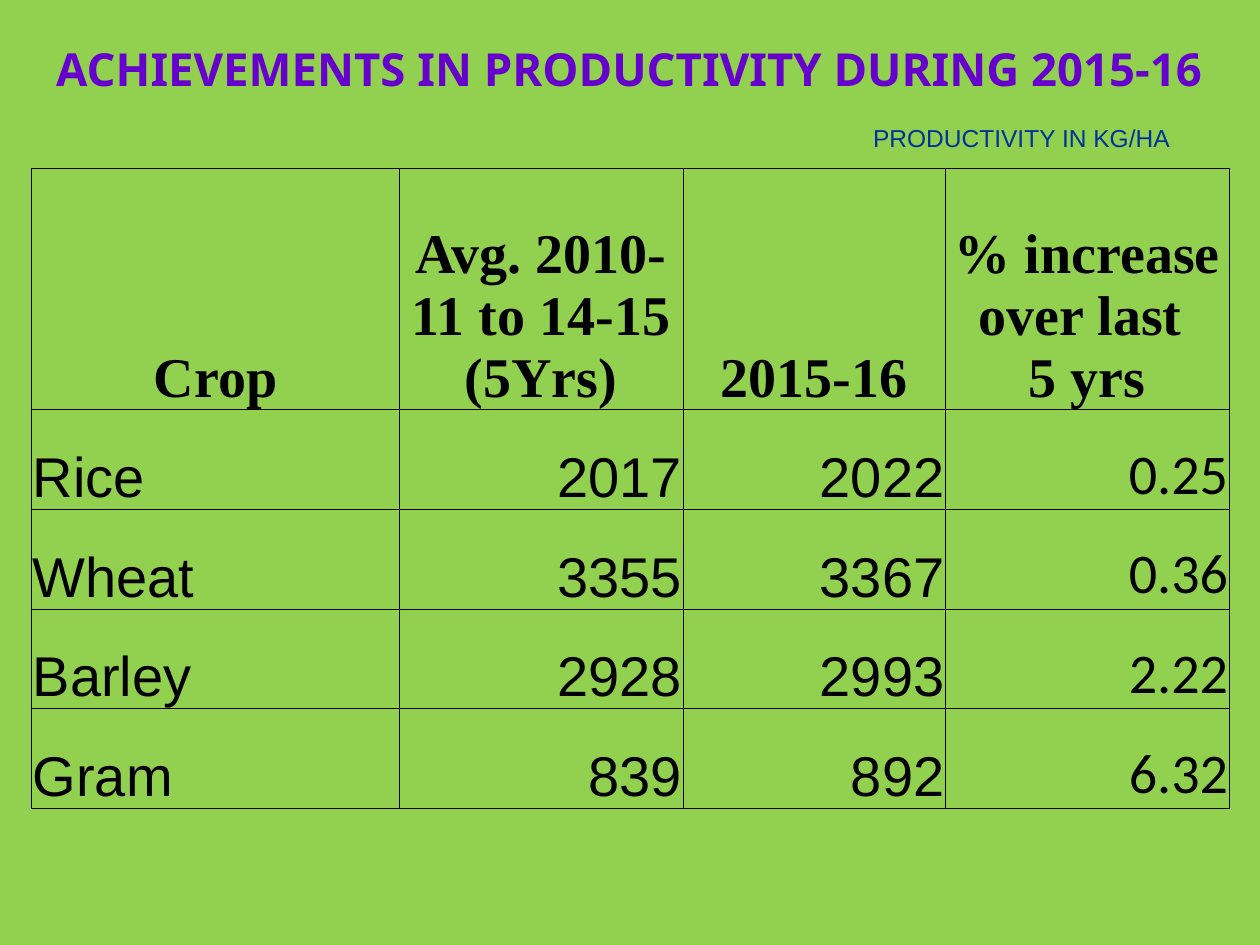
"""Build the slide on crop productivity in 2015-16."""
from lxml.etree import SubElement
from pptx import Presentation
from pptx.dml.color import RGBColor
from pptx.enum.text import MSO_ANCHOR, PP_ALIGN
from pptx.oxml.ns import qn
from pptx.util import Cm, Pt

COLORS = {"back": "92D050", "title": "6600CC", "unit": "003399", "ink": "000000"}
HEAD = ["Crop", "Avg. 2010-11 to 14-15 (5Yrs)", "2015-16", "% increase over last \n5 yrs"]
CROPS = [
    ["Rice", "2017", "2022", "0.25"],
    ["Wheat", "3355", "3367", "0.36"],
    ["Barley", "2928", "2993", "2.22"],
    ["Gram", "839", "892", "6.32"],
]
WIDTHS = [7.41, 5.72, 5.29, 5.72]
HEIGHTS = [4.87] + [2.01] * len(CROPS)
FACES = ["Arial", "Arial", "Arial", "Calibri"]
SIDES = [PP_ALIGN.LEFT] + [PP_ALIGN.RIGHT] * 3
INSETS = {"margin_left": Cm(0.02), "margin_right": Cm(0.02),
          "margin_top": Cm(0.02), "margin_bottom": Cm(0)}


def style(item, form):
    """Set each value of a format dict on an object."""
    for key, value in form.items():
        setattr(item, key, value)


def write(frame, text, side, form, color):
    """Fill a text frame, one paragraph to a line."""
    frame.text = text
    for para in frame.paragraphs:
        para.alignment = side
        for run in para.runs:
            style(run.font, form)
            run.font.color.rgb = RGBColor.from_string(COLORS[color])


def add_text(slide, box, text, side, form, color):
    """Add a wrapped text box with its text in the middle."""
    frame = slide.shapes.add_textbox(*map(Cm, box)).text_frame
    style(frame, {"word_wrap": True, "vertical_anchor": MSO_ANCHOR.MIDDLE})
    write(frame, text, side, form, color)


def add_rules(cell):
    """Draw a thin line on all four sides of a cell."""
    props = cell._tc.get_or_add_tcPr()
    for side in ("lnL", "lnR", "lnT", "lnB"):
        line = SubElement(props, qn(f"a:{side}"), w=str(Pt(0.5)))
        fill = SubElement(line, qn("a:solidFill"))
        SubElement(fill, qn("a:srgbClr"), val=COLORS["ink"])


def add_cell(cell, text, side, form):
    """Write and format one cell of the table."""
    write(cell.text_frame, text, side, form, "ink")
    style(cell, {"vertical_anchor": MSO_ANCHOR.BOTTOM, **INSETS})
    add_rules(cell)
    cell.fill.background()


def add_grid(slide):
    """Add the crop table with its head row."""
    box = map(Cm, (0.64, 3.39, sum(WIDTHS), sum(HEIGHTS)))
    table = slide.shapes.add_table(len(HEIGHTS), len(WIDTHS), *box).table
    style(table, {"first_row": False, "horz_banding": False})
    for col, width in zip(table.columns, WIDTHS):
        col.width = Cm(width)
    for row, height in zip(table.rows, HEIGHTS):
        row.height = Cm(height)
    bold = {"name": "Times New Roman", "size": Pt(32), "bold": True}
    for c, text in enumerate(HEAD):
        add_cell(table.cell(0, c), text, PP_ALIGN.CENTER, bold)
    for r, crop in enumerate(CROPS, 1):
        for c, text in enumerate(crop):
            form = {"name": FACES[c], "size": Pt(32), "bold": False}
            add_cell(table.cell(r, c), text, SIDES[c], form)


def main():
    """Build the slide and save it."""
    deck = Presentation()
    style(deck, {"slide_width": Cm(25.4), "slide_height": Cm(19.05)})
    slide = deck.slides.add_slide(deck.slide_layouts[6])
    fill = slide.background.fill
    fill.solid()
    fill.fore_color.rgb = RGBColor.from_string(COLORS["back"])
    add_text(slide, (0, 0.43, 25.4, 1.9), "ACHIEVEMENTS IN PRODUCTIVITY DURING 2015-16",
             PP_ALIGN.CENTER, {"name": "Noto Sans", "size": Pt(26), "bold": True}, "title")
    add_grid(slide)
    add_text(slide, (17.35, 2.34, 8.05, 0.86), "PRODUCTIVITY IN KG/HA",
             PP_ALIGN.LEFT, {"name": "Arial", "size": Pt(14)}, "unit")
    deck.save("out.pptx")


if __name__ == "__main__":
    main()
